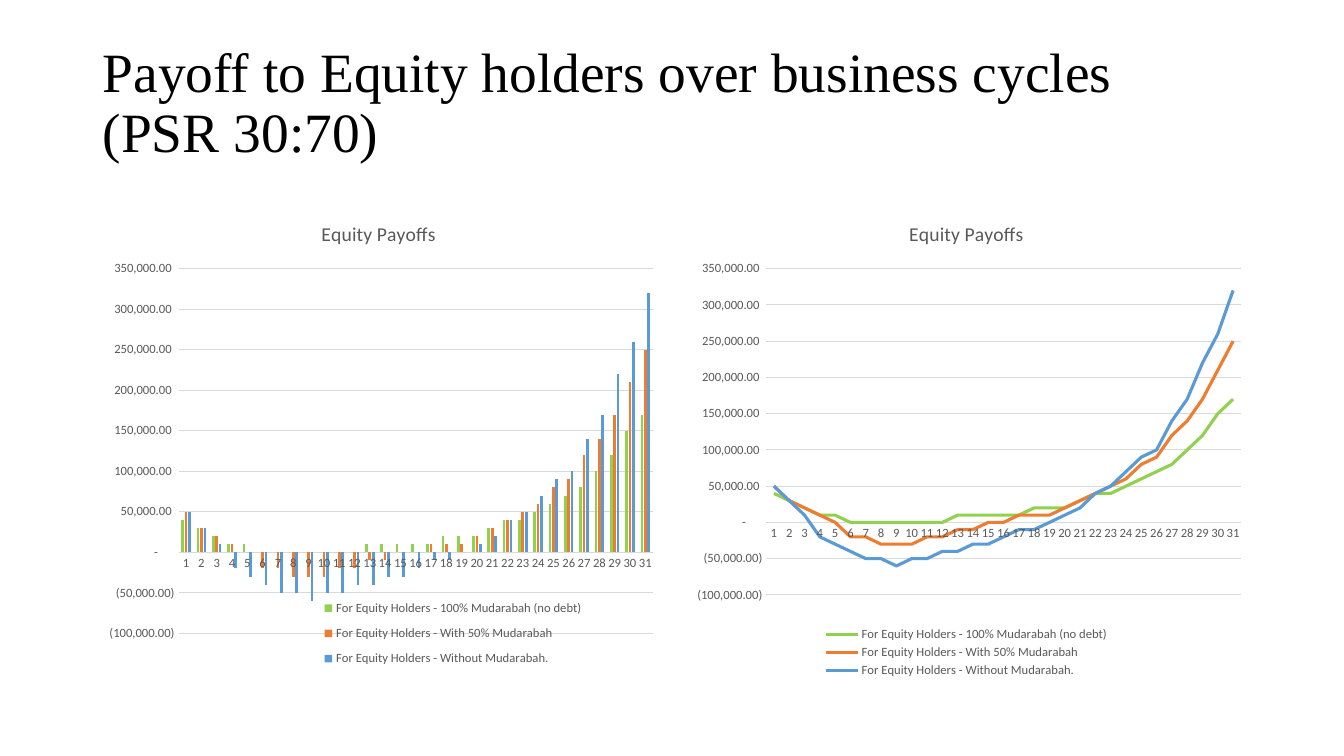
"""Build a slide comparing equity payoffs as clustered columns and as lines."""
from dataclasses import dataclass

import lxml.etree
import pptx
import pptx.chart.chart
import pptx.chart.data
import pptx.dml.color
import pptx.enum.chart
import pptx.enum.text
import pptx.oxml.ns
import pptx.slide
import pptx.util

Inches, Pt = pptx.util.Inches, pptx.util.Pt
Chart = pptx.chart.chart.Chart
ChartType = pptx.enum.chart.XL_CHART_TYPE
Box = tuple[float, float, float, float]


def rgb(code: str) -> pptx.dml.color.RGBColor:
    """Turn a hex code into a colour."""
    return pptx.dml.color.RGBColor.from_string(code)


@dataclass(frozen=True)
class Theme:
    """Fonts, type sizes in points and colours."""
    title_font: str = "Times New Roman"
    chart_font: str = "Calibri"
    title_size: float = 39.6
    chart_title_size: float = 14
    label_size: float = 9
    ink: str = "000000"
    label: str = "595959"
    grid: str = "D9D9D9"
    grid_width: float = 0.75
    series_width: float = 2.25


@dataclass(frozen=True)
class Payoff:
    """One series, with values in tens of thousands."""
    name: str
    color: str
    amounts: tuple[int, ...]


@dataclass(frozen=True)
class Panel:
    """One chart, with its plot and legend as fractions of its frame."""
    kind: ChartType
    left: float
    plot: Box
    legend: Box


THEME = Theme()
UNIT = 10000
NUMBER_FORMAT = '_(* #,##0.00_);_(* \\(#,##0.00\\);_(* "-"??_);_(@_)'
PAYOFFS = (
    Payoff("For Equity Holders - 100% Mudarabah (no debt)", "92D050",
           (4, 3, 2, 1, 1, 0, 0, 0, 0, 0, 0, 0, 1, 1, 1, 1, 1, 2, 2, 2,
            3, 4, 4, 5, 6, 7, 8, 10, 12, 15, 17)),
    Payoff("For Equity Holders - With 50% Mudarabah", "ED7D31",
           (5, 3, 2, 1, 0, -2, -2, -3, -3, -3, -2, -2, -1, -1, 0, 0, 1, 1, 1, 2,
            3, 4, 5, 6, 8, 9, 12, 14, 17, 21, 25)),
    Payoff("For Equity Holders - Without Mudarabah.", "5B9BD5",
           (5, 3, 1, -2, -3, -4, -5, -5, -6, -5, -5, -4, -4, -3, -3, -2, -1, -1, 0, 1,
            2, 4, 5, 7, 9, 10, 14, 17, 22, 26, 32)),
)
PANELS = (
    Panel(ChartType.COLUMN_CLUSTERED, 0.92, (0.15, 0.14, 0.83, 0.76), (0.39, 0.81, 0.48, 0.18)),
    Panel(ChartType.LINE, 6.75, (0.15, 0.14, 0.83, 0.68), (0.24, 0.88, 0.52, 0.12)),
)


def set_all(target: object, values: dict[str, object]) -> None:
    """Set each named attribute on the target."""
    for name, value in values.items():
        setattr(target, name, value)


def set_font(font: object, face: str, size: float, color: str) -> None:
    """Give a font its face, size and colour."""
    set_all(font, {"name": face, "size": Pt(size), "bold": False})
    font.color.rgb = rgb(color)


def set_line(line: object, color: str, width: float) -> None:
    """Give a line its colour and width."""
    line.color.rgb = rgb(color)
    line.width = Pt(width)


def place(chart: Chart, tag: str, index: int, box: Box, inner: bool = False) -> None:
    """Pin a chart part to a box inside the chart frame."""
    qn = pptx.oxml.ns.qn
    part = chart.element.find(".//" + qn(tag))
    for old in part.findall(qn("c:layout")):
        part.remove(old)
    layout = lxml.etree.Element(qn("c:layout"))
    manual = lxml.etree.SubElement(layout, qn("c:manualLayout"))
    values = {"layoutTarget": "inner"} if inner else {}
    values |= {"xMode": "edge", "yMode": "edge"}
    values |= dict(zip("xywh", map(str, box)))
    for name, value in values.items():
        lxml.etree.SubElement(manual, qn("c:" + name)).set("val", value)
    part.insert(index, layout)


def style_axes(chart: Chart) -> None:
    """Style both axes and the gridlines."""
    tick = pptx.enum.chart.XL_TICK_MARK.NONE
    cat, val = chart.category_axis, chart.value_axis
    for axis in (cat, val):
        set_all(axis, {"major_tick_mark": tick, "minor_tick_mark": tick})
        set_font(axis.tick_labels.font, THEME.chart_font, THEME.label_size, THEME.label)
    cat.has_major_gridlines = False
    set_all(val, {"minimum_scale": -100000, "maximum_scale": 350000,
                  "major_unit": 50000, "has_major_gridlines": True})
    set_all(val.tick_labels, {"number_format": NUMBER_FORMAT,
                              "number_format_is_linked": False})
    set_line(cat.format.line, THEME.grid, THEME.grid_width)
    set_line(val.major_gridlines.format.line, THEME.grid, THEME.grid_width)
    val.format.line.fill.background()


def style_series(chart: Chart, kind: ChartType) -> None:
    """Colour the series as columns or as lines."""
    plot = chart.plots[0]
    plot.vary_by_categories = False
    if kind == ChartType.COLUMN_CLUSTERED:
        set_all(plot, {"gap_width": 219, "overlap": -27})
    for series, payoff in zip(plot.series, PAYOFFS):
        if kind == ChartType.LINE:
            series.smooth = False
            set_line(series.format.line, payoff.color, THEME.series_width)
        else:
            series.invert_if_negative = False
            series.format.fill.solid()
            series.format.fill.fore_color.rgb = rgb(payoff.color)


def add_panel(s: pptx.slide.Slide, panel: Panel) -> None:
    """Add one payoff chart."""
    data = pptx.chart.data.CategoryChartData(number_format=NUMBER_FORMAT)
    data.categories = [str(n + 1) for n in range(len(PAYOFFS[0].amounts))]
    for payoff in PAYOFFS:
        data.add_series(payoff.name, [v * UNIT for v in payoff.amounts])
    chart = s.shapes.add_chart(panel.kind, Inches(panel.left), Inches(2),
                               Inches(5.67), Inches(4.76), data).chart
    set_font(chart.font, THEME.chart_font, 10, THEME.ink)
    set_all(chart, {"has_title": True, "has_legend": True})
    p = chart.chart_title.text_frame.paragraphs[0]
    r = p.add_run()
    r.text = "Equity Payoffs"
    set_font(r.font, THEME.chart_font, THEME.chart_title_size, THEME.label)
    set_all(chart.legend, {"position": pptx.enum.chart.XL_LEGEND_POSITION.BOTTOM,
                           "include_in_layout": False})
    set_font(chart.legend.font, THEME.chart_font, THEME.label_size, THEME.label)
    style_axes(chart)
    style_series(chart, panel.kind)
    place(chart, "c:plotArea", 0, panel.plot, inner=True)
    place(chart, "c:legend", 1, panel.legend)


def add_title(s: pptx.slide.Slide, text: str) -> None:
    """Add the slide heading."""
    sp = s.shapes.add_textbox(Inches(0.92), Inches(0.4), Inches(11.5), Inches(1.27))
    tf = sp.text_frame
    set_all(tf, {"word_wrap": True,
                 "vertical_anchor": pptx.enum.text.MSO_ANCHOR.MIDDLE})
    p = tf.paragraphs[0]
    p.line_spacing = 0.9
    r = p.add_run()
    r.text = text
    set_font(r.font, THEME.title_font, THEME.title_size, THEME.ink)


def main() -> None:
    """Build and save the slide."""
    prs = pptx.Presentation()
    set_all(prs, {"slide_width": Inches(13.33), "slide_height": Inches(7.5)})
    s = prs.slides.add_slide(prs.slide_layouts[6])
    add_title(s, "Payoff to Equity holders over business cycles (PSR 30:70)")
    for panel in PANELS:
        add_panel(s, panel)
    prs.save("out.pptx")


if __name__ == "__main__":
    main()
